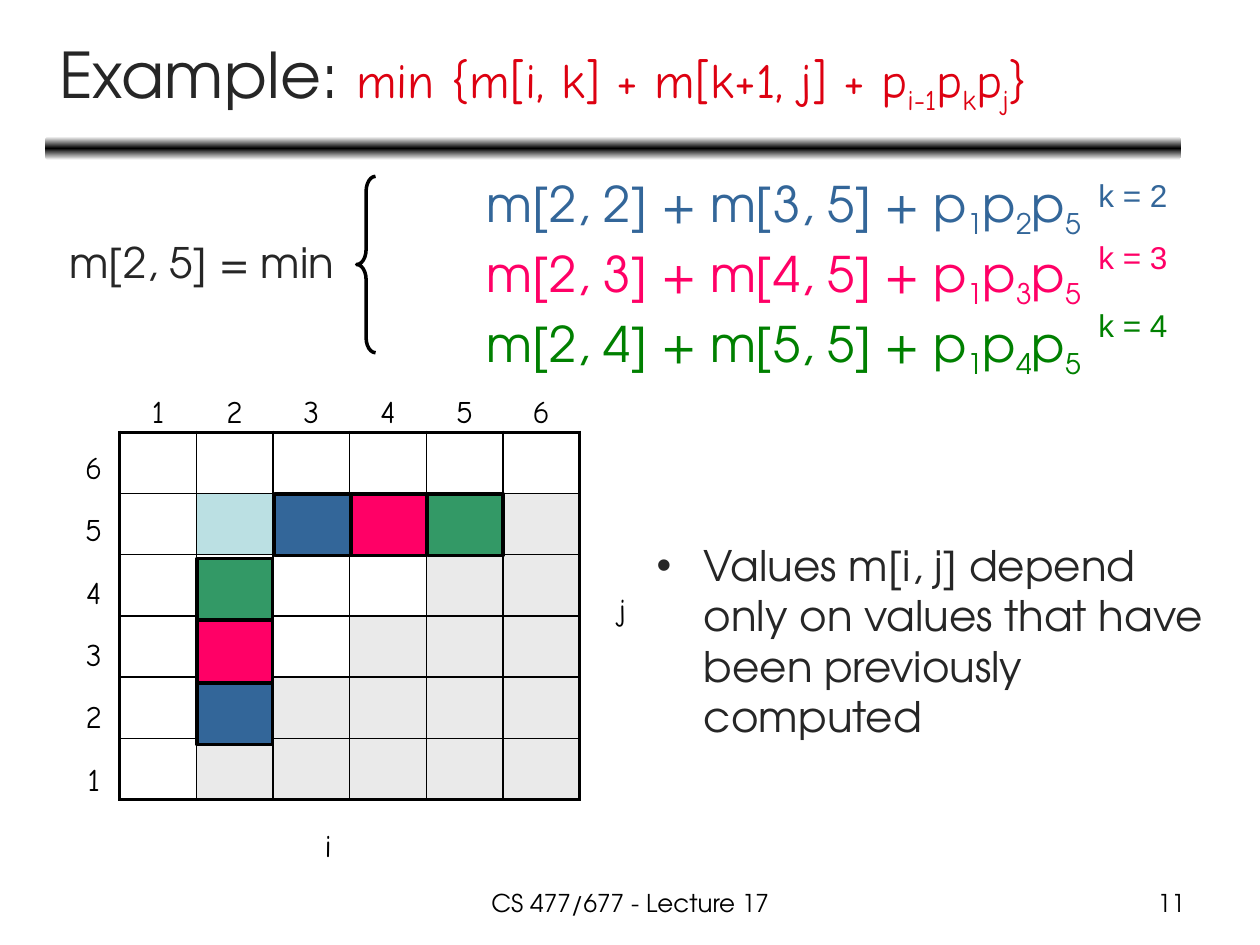
from copy import deepcopy

from lxml import etree
from pptx import Presentation
from pptx.dml.color import RGBColor
from pptx.enum import shapes, text
from pptx.oxml import ns
from pptx.util import Pt

THEME = {
    "sans": "TeX Gyre Adventor", "hand": "Comic Neue", "plain": "Arial",
    "ink": "262626", "black": "000000", "white": "FFFFFF", "red": "DD0111",
    "blue": "336699", "pink": "FF0066", "green": "008000", "leaf": "339966",
    "target": "BBE0E3", "unused": "EAEAEA",
    "title": 36, "formula": 28, "main": 24, "label": 18, "footer": 14,
}

# Underscores enclose subscripts.
TITLE = [("Example: ", "sans", "title", "ink"),
         ("min {m[i, k] + m[k+1, j] + p_i-1_p_k_p_j_}", "hand", "formula", "red")]
# formula, text colour, square colour, split label, label top
CHOICES = [
    ("m[2, 2] + m[3, 5] + p_1_p_2_p_5_", "blue", "blue", "k = 2", 97.2),
    ("m[2, 3] + m[4, 5] + p_1_p_3_p_5_", "pink", "pink", "k = 3", 132.5),
    ("m[2, 4] + m[5, 5] + p_1_p_4_p_5_", "green", "leaf", "k = 4", 171.4),
]
LEFT_SIDE = "m[2, 5] = min"
REMARK = "Values m[i, j] depend only on values that have been previously computed"
FOOTER, NUMBER = "CS 477/677 - Lecture 17", "11"

SIZE = 6
GRID_LEFT, GRID_TOP, COLUMN, ROW = 68.4, 247, 43.8, 35
TARGET_CELL = (1, 1)
HANGING = 27

deck = Presentation()
deck.slide_width, deck.slide_height = Pt(720), Pt(540)
page = deck.slides.add_slide(deck.slide_layouts[3])


def rgb(name):
    return RGBColor.from_string(THEME[name])


def place(box, left, top, width, height):
    box.left, box.top, box.width, box.height = map(Pt, (left, top, width, height))
    return box


def text_box(left, top, width, height):
    return page.shapes.add_textbox(*map(Pt, (left, top, width, height)))


def write(box, paragraphs, align="LEFT", anchor="TOP", wrap=True,
          margin=0, indent=0, bullet=None, line_spacing=None):
    """Fill a box with paragraphs, each a list of (text, font, size, colour)."""
    frame = box.text_frame
    frame.word_wrap = wrap
    frame.auto_size = text.MSO_AUTO_SIZE.NONE
    frame.vertical_anchor = text.MSO_ANCHOR[anchor]
    for index, spans in enumerate(paragraphs):
        para = frame.add_paragraph() if index else frame.paragraphs[0]
        para.alignment = text.PP_ALIGN[align]
        if line_spacing:
            para.line_spacing = line_spacing
        props = para._p.get_or_add_pPr()
        props.set("marL", str(Pt(margin)))
        props.set("indent", str(Pt(indent)))
        if bullet:
            etree.SubElement(props, ns.qn("a:buChar")).set("char", bullet)
        else:
            etree.SubElement(props, ns.qn("a:buNone"))
        for words, font, size, color in spans:
            for part, piece in enumerate(words.split("_")):
                if not piece:
                    continue
                span = para.add_run()
                span.text = piece
                span.font.name = THEME[font]
                span.font.size = Pt(THEME[size])
                span.font.color.rgb = rgb(color)
                if part % 2:
                    span.font._element.set("baseline", "-25000")


def add_label(words, x, y):
    """Centre a short label on a point."""
    write(text_box(x - 12.5, y - 14.4, 25, 28.8),
          [[(words, "hand", "label", "black")]], align="CENTER", wrap=False)


def add_outline(parent, kind, left, top, width, height, fill=None):
    shape = parent.add_shape(kind, *map(Pt, (left, top, width, height)))
    shape.shadow.inherit = False
    if fill:
        shape.fill.solid()
        shape.fill.fore_color.rgb = rgb(fill)
    else:
        shape.fill.background()
    shape.line.color.rgb = rgb("black")
    shape.line.width = Pt(2)
    return shape


def add_rule():
    bar = page.shapes.add_shape(shapes.MSO_SHAPE.ROUNDED_RECTANGLE,
                                Pt(26), Pt(78), Pt(649), Pt(13.5))
    bar.shadow.inherit = False
    bar.line.fill.background()
    bar.fill.gradient()
    bar.fill.gradient_angle = 90
    stop_list = bar._element.spPr.find(".//" + ns.qn("a:gsLst"))
    stop_list.append(deepcopy(stop_list[0]))
    for stop, color, position in zip(bar.fill.gradient_stops,
                                     ("white", "black", "white"), (0, 0.5, 1)):
        stop.color.rgb = rgb(color)
        stop.position = position


def set_borders(cell, widths):
    props = cell._tc.get_or_add_tcPr()
    for index, (side, width) in enumerate(widths.items()):
        line = etree.Element(ns.qn("a:ln" + side), w=str(Pt(width)))
        solid = etree.SubElement(line, ns.qn("a:solidFill"))
        etree.SubElement(solid, ns.qn("a:srgbClr"), val=THEME["black"])
        props.insert(index, line)


def add_grid():
    table = page.shapes.add_table(SIZE, SIZE, Pt(GRID_LEFT), Pt(GRID_TOP),
                                  Pt(SIZE * COLUMN), Pt(SIZE * ROW)).table
    table.first_row = table.horz_banding = False
    last = SIZE - 1
    for row in range(SIZE):
        table.rows[row].height = Pt(ROW)
        table.columns[row].width = Pt(COLUMN)
        for column in range(SIZE):
            cell = table.cell(row, column)
            if (row, column) == TARGET_CELL:
                fill = "target"
            else:
                fill = "unused" if row + column >= SIZE else None
            if fill:
                cell.fill.solid()
                cell.fill.fore_color.rgb = rgb(fill)
            else:
                cell.fill.background()
            outer = {"L": column == 0, "R": column == last,
                     "T": row == 0, "B": row == last}
            set_borders(cell, {s: 2.25 if edge else 1 for s, edge in outer.items()})


title, formulas, remark = page.placeholders
write(place(title, 26.6, 8, 648, 71), [TITLE], anchor="MIDDLE")
write(place(formulas, 27.4, 95.8, 631, 116),
      [[(words, "sans", "formula", color)] for words, color, *_ in CHOICES],
      margin=243.4, line_spacing=0.9)
write(place(remark, 368, 304.6, 335, 185), [[(REMARK, "sans", "main", "ink")]],
      margin=HANGING, indent=-HANGING, bullet="•")

add_rule()
add_grid()
for n in range(SIZE):
    add_label(str(n + 1), GRID_LEFT + (n + 0.5) * COLUMN, 234.7)
    add_label(str(SIZE - n), 53.6, 267 + 35.6 * n)
add_label("i", 187.6, 483.1)
add_label("j", 355.7, 347.8)

brace = add_outline(page.shapes, shapes.MSO_SHAPE.LEFT_BRACE, 203.8, 100.8, 10.8, 100.8)
brace.adjustments[0] = 0.79
write(text_box(32.4, 131.8, 185, 49), [[(LEFT_SIDE, "sans", "main", "ink")]])

for n, (_, color, fill, split, top) in enumerate(CHOICES):
    pair = page.shapes.add_group_shape().shapes
    for left, square_top in ((112.6, 390.3 - 35.6 * n), (157 + 43.6 * n, 282.2)):
        add_outline(pair, shapes.MSO_SHAPE.RECTANGLE, left, square_top, 43.2, 35.3, fill)
    write(text_box(620.6, top, 54, 28.8), [[(split, "plain", "label", color)]], wrap=False)

write(text_box(246.2, 504, 228, 25), [[(FOOTER, "sans", "footer", "black")]], align="CENTER")
write(text_box(516.2, 504, 168, 25), [[(NUMBER, "sans", "footer", "black")]], align="RIGHT")

deck.save("out.pptx")
